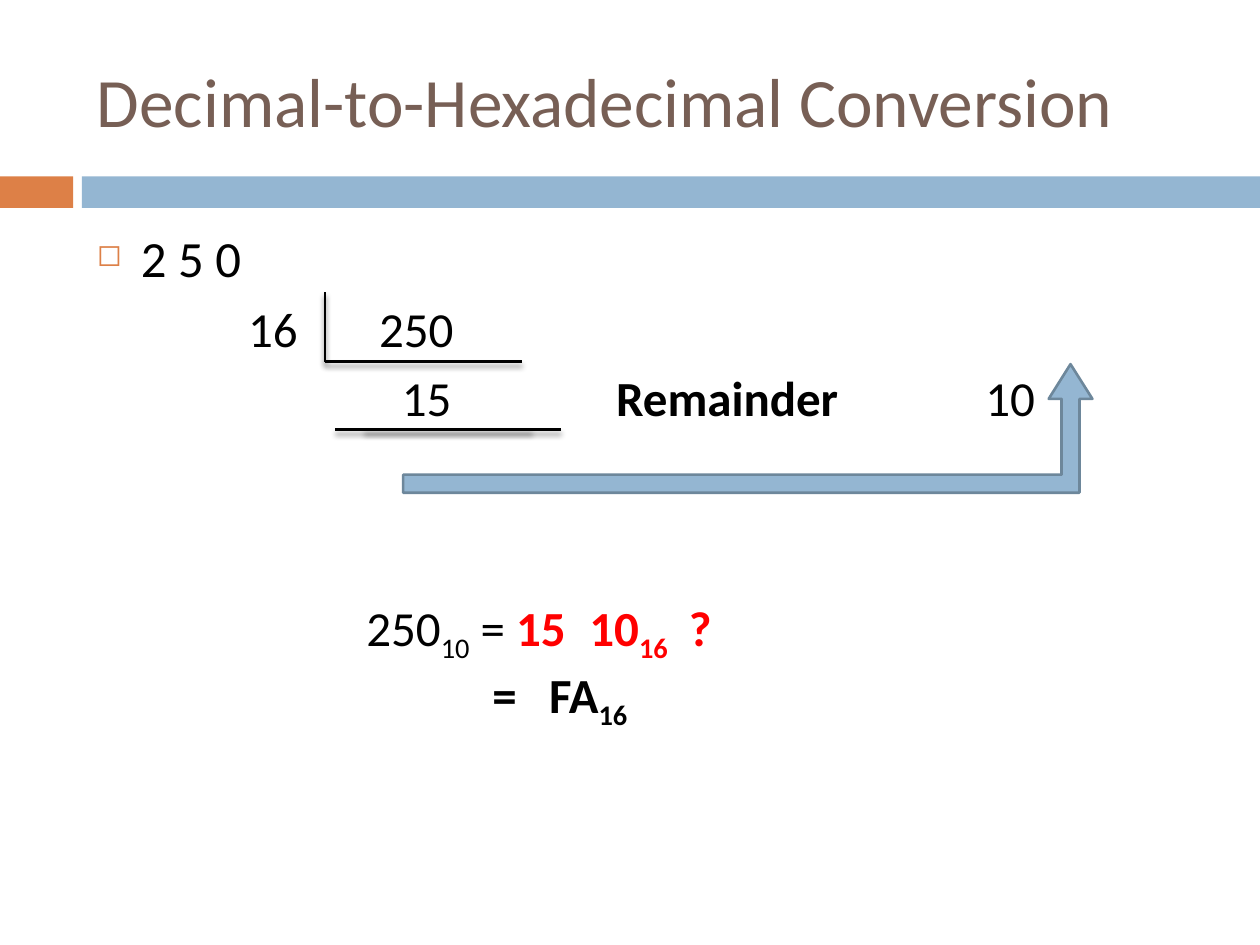
from dataclasses import dataclass

from lxml import etree
from pptx import Presentation
from pptx.dml.color import RGBColor
from pptx.enum.shapes import MSO_CONNECTOR, MSO_SHAPE
from pptx.enum.text import MSO_ANCHOR
from pptx.oxml.ns import qn
from pptx.util import Inches, Pt

STRAIGHT = MSO_CONNECTOR.STRAIGHT
RECTANGLE = MSO_SHAPE.RECTANGLE
BENT_UP_ARROW = MSO_SHAPE.BENT_UP_ARROW
TOP, MIDDLE = MSO_ANCHOR.TOP, MSO_ANCHOR.MIDDLE
BLACK, RED, BROWN = "000000", "FF0000", "775F55"
ORANGE, BLUE, DARK_BLUE = "DD8047", "94B6D2", "6D879B"
FONT = "Calibri"


@dataclass(frozen=True)
class Run:
    text: str
    color: str = BLACK
    bold: bool = False
    subscript: bool = False


@dataclass(frozen=True)
class Line:
    runs: tuple[Run, ...]
    tabs: tuple[float, ...] = ()
    bullet: str = ""


@dataclass(frozen=True)
class TextBlock:
    left: float
    top: float
    width: float
    height: float
    lines: tuple[Line, ...]
    size: float = 28
    inset: float = 0.1
    anchor: MSO_ANCHOR = TOP


@dataclass(frozen=True)
class Rule:
    x1: float
    y1: float
    x2: float
    y2: float


def rgb(value: str) -> RGBColor:
    return RGBColor.from_string(value)


def add_child(parent, tag: str, **attributes):
    return etree.SubElement(parent, qn(tag), attributes)


def draw_shape(slide, kind, left, top, width, height, fill: str):
    shape = slide.shapes.add_shape(
        kind, Inches(left), Inches(top), Inches(width), Inches(height)
    )
    shape.shadow.inherit = False
    shape.fill.solid()
    shape.fill.fore_color.rgb = rgb(fill)
    shape.line.fill.background()
    return shape


def draw_rule(slide, rule: Rule) -> None:
    connector = slide.shapes.add_connector(
        STRAIGHT, Inches(rule.x1), Inches(rule.y1), Inches(rule.x2), Inches(rule.y2)
    )
    connector.line.color.rgb = rgb(BLACK)
    connector.line.width = Pt(1.5)
    effects = add_child(connector._element.spPr, "a:effectLst")
    shadow = add_child(
        effects, "a:outerShdw", blurRad=str(Pt(3)), dist=str(Pt(2.4)),
        dir="5400000", rotWithShape="0",
    )
    shadow_color = add_child(shadow, "a:srgbClr", val=BLACK)
    add_child(shadow_color, "a:alpha", val="45000")


def format_paragraph(paragraph, line: Line) -> None:
    properties = paragraph._p.get_or_add_pPr()
    if line.bullet:
        paragraph.space_before = Pt(7)
        properties.set("marL", str(Inches(0.35)))
        properties.set("indent", str(Inches(-0.35)))
        bullet_color = add_child(properties, "a:buClr")
        add_child(bullet_color, "a:srgbClr", val=ORANGE)
        add_child(properties, "a:buSzPct", val="60000")
        add_child(properties, "a:buChar", char=line.bullet)
    if line.tabs:
        stops = add_child(properties, "a:tabLst")
        for position in line.tabs:
            add_child(stops, "a:tab", pos=str(Inches(position)), algn="l")


def draw_text(slide, block: TextBlock) -> None:
    box = slide.shapes.add_textbox(
        Inches(block.left), Inches(block.top), Inches(block.width), Inches(block.height)
    )
    frame = box.text_frame
    frame.word_wrap = True
    frame.vertical_anchor = block.anchor
    frame.margin_left = Inches(block.inset)
    for index, line in enumerate(block.lines):
        paragraph = frame.add_paragraph() if index else frame.paragraphs[0]
        format_paragraph(paragraph, line)
        for part in line.runs:
            run = paragraph.add_run()
            run.text = part.text
            run.font.name = FONT
            run.font.size = Pt(block.size)
            run.font.bold = part.bold
            run.font.color.rgb = rgb(part.color)
            if part.subscript:
                run.font._element.set("baseline", "-25000")


DIVISION_RULES = (
    Rule(2.58, 2.32, 2.58, 2.87),
    Rule(2.58, 2.87, 4.14, 2.87),
    Rule(2.66, 3.41, 4.22, 3.41),
    Rule(2.89, 3.41, 4.45, 3.41),
)

TEXT_BLOCKS = (
    TextBlock(0.67, 0.25, 8.92, 1.08,
              (Line((Run("Decimal-to-Hexadecimal Conversion", BROWN),)),),
              size=39.6, anchor=MIDDLE),
    TextBlock(0.67, 1.75, 8.92, 4.92, (Line((Run("2 5 0"),), bullet="◻"),), size=29),
    TextBlock(2.73, 2.32, 1.56, 0.57, (Line((Run("250"),)),), inset=0.28),
    TextBlock(1.87, 2.32, 0.78, 0.57, (Line((Run("16"),)),)),
    TextBlock(2.73, 2.87, 1.17, 0.57, (Line((Run("15"),)),), inset=0.46),
    TextBlock(4.61, 2.87, 3.75, 0.57,
              (Line((Run("Remainder", bold=True), Run("\t10")), tabs=(2.93,)),),
              inset=0.28),
    TextBlock(2.81, 4.69, 4.69, 1.04, (
        Line((
            Run("250"),
            Run("10", subscript=True),
            Run(" = "),
            Run("15\t10", RED, bold=True),
            Run("16", RED, bold=True, subscript=True),
            Run("\t?", RED, bold=True),
        ), tabs=(1.77, 2.56)),
        Line((
            Run("\t=\tFA", bold=True),
            Run("16", bold=True, subscript=True),
        ), tabs=(1.0, 1.45)),
    )),
)


def main() -> None:
    presentation = Presentation()
    presentation.slide_width = Inches(10)
    presentation.slide_height = Inches(7.5)
    slide = presentation.slides.add_slide(presentation.slide_layouts[6])

    draw_shape(slide, RECTANGLE, 0, 1.4, 0.58, 0.25, ORANGE)
    draw_shape(slide, RECTANGLE, 0.65, 1.4, 9.35, 0.25, BLUE)
    for rule in DIVISION_RULES:
        draw_rule(slide, rule)
    for block in TEXT_BLOCKS:
        draw_text(slide, block)

    reading_order = draw_shape(slide, BENT_UP_ARROW, 3.2, 2.89, 5.47, 1.02, BLUE)
    for index, ratio in enumerate((0.14, 0.17, 0.27)):
        reading_order.adjustments[index] = ratio
    reading_order.line.color.rgb = rgb(DARK_BLUE)
    reading_order.line.width = Pt(1.5)

    presentation.save("out.pptx")


if __name__ == "__main__":
    main()
